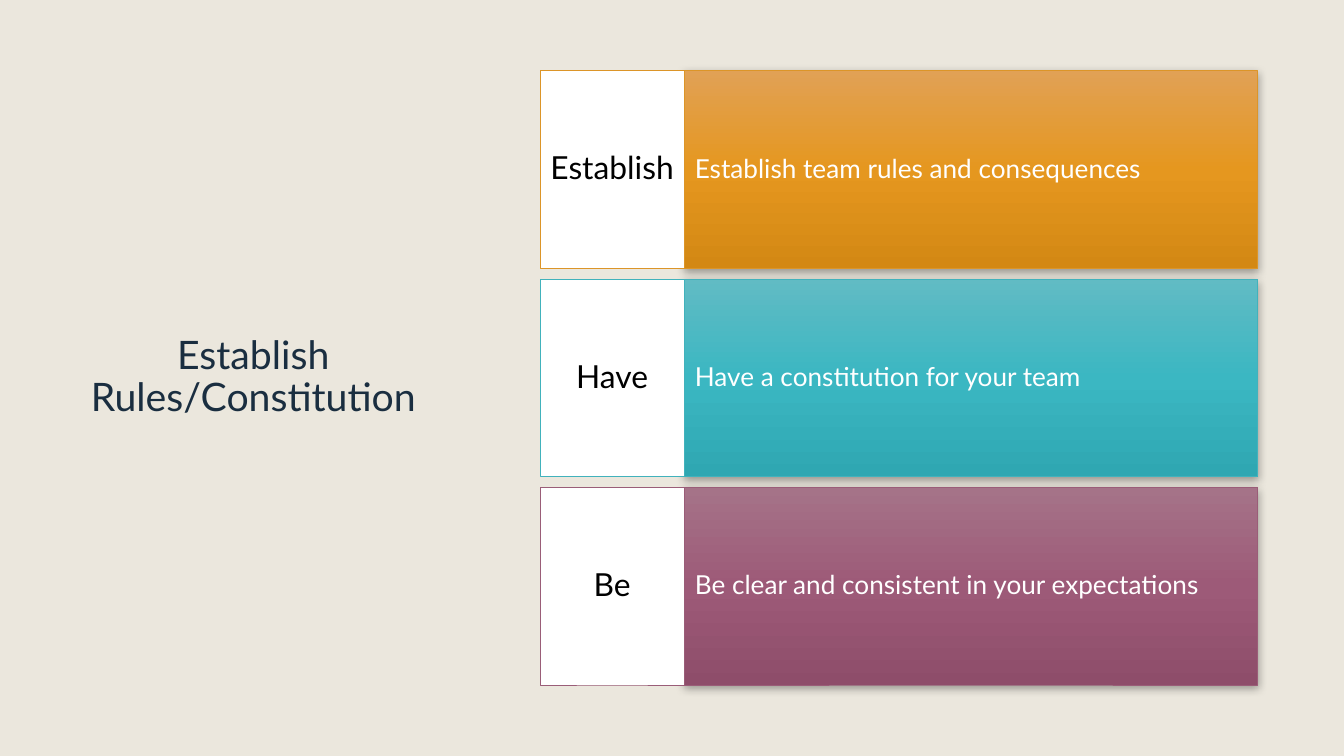
from copy import deepcopy
from dataclasses import dataclass

from lxml import etree
from pptx import Presentation
from pptx import util as u
from pptx.dml.color import RGBColor
from pptx.enum import shapes, text
from pptx.oxml import ns


@dataclass(frozen=True)
class Theme:
    font: str = "Lato"
    background: str = "EBE7DD"
    title: str = "1A2E40"
    white: str = "FFFFFF"
    black: str = "000000"
    title_size: int = 21
    label_size: int = 17
    detail_size: int = 14
    line_width: float = 0.5


THEME = Theme()

# A 16:9 slide
SLIDE_WIDTH = 10
SLIDE_HEIGHT = SLIDE_WIDTH * 9 / 16

# Label, detail, outline colour, gradient from top to bottom
RULES = [
    ("Establish", "Establish team rules and consequences",
     "DC9528", ("E1A155", "E5971F", "D38814")),
    ("Have", "Have a constitution for your team",
     "41B2BC", ("61BBC4", "3BB7C2", "2FA7B2")),
    ("Be", "Be clear and consistent in your expectations",
     "9A5D78", ("A57388", "9D5A78", "8E4D6A")),
]

# Rows: a narrow label box beside a wide detail box, centred on the slide
LABEL_LEFT, LABEL_WIDTH, DETAIL_WIDTH = 4.02, 1.07, 4.27
ROW_HEIGHT, ROW_STEP = 1.47, 1.55
ROW_TOP = (SLIDE_HEIGHT - ROW_HEIGHT - ROW_STEP * (len(RULES) - 1)) / 2


def rgb(value):
    return RGBColor.from_string(value)


def apply_format(target, values):
    for name, value in values.items():
        setattr(target, name, value)


def write_text(shape, wording, size, color, align, spacing, insets):
    frame = shape.text_frame
    horizontal, vertical = map(u.Inches, insets)
    apply_format(frame, {
        "word_wrap": True, "vertical_anchor": text.MSO_ANCHOR.MIDDLE,
        "margin_left": horizontal, "margin_right": horizontal,
        "margin_top": vertical, "margin_bottom": vertical,
    })
    paragraph = frame.paragraphs[0]
    apply_format(paragraph, {"alignment": align, "line_spacing": spacing})
    run = paragraph.add_run()
    run.text = wording
    apply_format(run.font, {"name": THEME.font, "size": u.Pt(size)})
    run.font.color.rgb = rgb(color)


def add_box(slide, left, top, width, line_color):
    shape = slide.shapes.add_shape(
        shapes.MSO_SHAPE.RECTANGLE, u.Inches(left), u.Inches(top),
        u.Inches(width), u.Inches(ROW_HEIGHT))
    shape.shadow.inherit = False
    shape.line.color.rgb = rgb(line_color)
    shape.line.width = u.Pt(THEME.line_width)
    return shape


def fill_gradient(shape, colors):
    fill = shape.fill
    fill.gradient()
    fill.gradient_angle = 270
    stop_list = shape.element.spPr.find(".//" + ns.qn("a:gsLst"))
    stop_list.append(deepcopy(stop_list[0]))
    for index, (stop, color) in enumerate(zip(fill.gradient_stops, colors)):
        stop.position = index / (len(colors) - 1)
        stop.color.rgb = rgb(color)


def add_soft_shadow(shape):
    effects = shape.element.spPr.find(ns.qn("a:effectLst"))
    shadow = etree.SubElement(
        effects, ns.qn("a:outerShdw"), blurRad=str(u.Pt(4.5)),
        dist=str(u.Pt(1.5)), dir="5400000", algn="ctr", rotWithShape="0")
    color = etree.SubElement(shadow, ns.qn("a:srgbClr"), val=THEME.black)
    etree.SubElement(color, ns.qn("a:alpha"), val="35000")


def add_title(slide, wording):
    box = slide.shapes.add_textbox(
        u.Inches(0.53), u.Inches(0.52), u.Inches(2.71), u.Inches(4.58))
    write_text(box, wording, THEME.title_size, THEME.title,
               text.PP_ALIGN.CENTER, 0.89, (0.1, 0.05))


def add_rule(slide, top, label, detail, line_color, gradient):
    detail_box = add_box(slide, LABEL_LEFT + LABEL_WIDTH, top,
                         DETAIL_WIDTH, line_color)
    fill_gradient(detail_box, gradient)
    add_soft_shadow(detail_box)
    write_text(detail_box, detail, THEME.detail_size, THEME.white,
               text.PP_ALIGN.LEFT, 0.9, (0.08, 0.37))

    label_box = add_box(slide, LABEL_LEFT, top, LABEL_WIDTH, line_color)
    label_box.fill.solid()
    label_box.fill.fore_color.rgb = rgb(THEME.white)
    write_text(label_box, label, THEME.label_size, THEME.black,
               text.PP_ALIGN.CENTER, 0.9, (0.06, 0.14))


def main():
    presentation = Presentation()
    presentation.slide_width = u.Inches(SLIDE_WIDTH)
    presentation.slide_height = u.Inches(SLIDE_HEIGHT)
    slide = presentation.slides.add_slide(presentation.slide_layouts[6])

    # Background and title
    slide.background.fill.solid()
    slide.background.fill.fore_color.rgb = rgb(THEME.background)
    add_title(slide, "Establish Rules/Constitution")

    # One row per rule
    for index, rule in enumerate(RULES):
        add_rule(slide, ROW_TOP + index * ROW_STEP, *rule)

    presentation.save("out.pptx")


if __name__ == "__main__":
    main()
